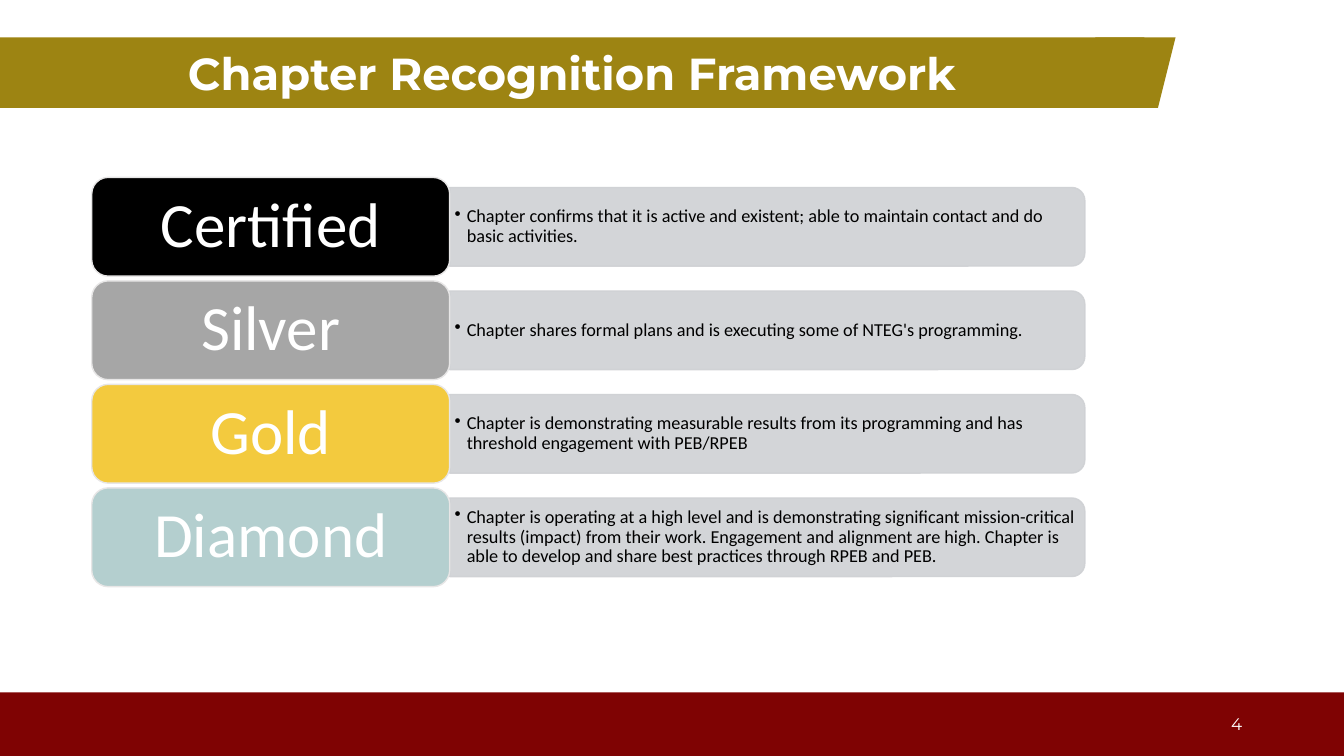
"""Build the Chapter Recognition Framework slide."""
from lxml.etree import SubElement
from pptx import Presentation
from pptx.dml.color import RGBColor
from pptx.enum.shapes import MSO_SHAPE
from pptx.enum.text import MSO_ANCHOR, PP_ALIGN
from pptx.oxml.ns import qn
from pptx.util import Inches, Pt

WHITE = RGBColor(0xFF, 0xFF, 0xFF)
BLACK = RGBColor(0x00, 0x00, 0x00)
MAROON = RGBColor(0x7F, 0x03, 0x03)
OLIVE = RGBColor(0x9D, 0x84, 0x12)
PANEL_GRAY = RGBColor(0xCF, 0xD1, 0xD4)
EDGE_GRAY = RGBColor(0xE7, 0xE6, 0xE6)
SILVER = RGBColor(0xA6, 0xA6, 0xA6)
GOLD = RGBColor(0xF3, 0xCA, 0x3E)
TEAL = RGBColor(0x6D, 0xA1, 0xA1)

TIERS = [
    ("Certified", BLACK, 100,
     "Chapter confirms that it is active and existent; able to maintain "
     "contact and do basic activities."),
    ("Silver", SILVER, 100,
     "Chapter shares formal plans and is executing some of NTEG's programming."),
    ("Gold", GOLD, 100,
     "Chapter is demonstrating measurable results from its programming and "
     "has threshold engagement with PEB/RPEB"),
    ("Diamond", TEAL, 51,
     "Chapter is operating at a high level and is demonstrating significant "
     "mission-critical results (impact) from their work. Engagement and "
     "alignment are high. Chapter is able to develop and share best practices "
     "through RPEB and PEB."),
]
FIRST_CENTER, LAST_CENTER = 2.25, 5.33
TIER_LEFT, TIER_WIDTH, TIER_HEIGHT = 0.91, 3.55, 0.98
PANEL_LEFT, PANEL_WIDTH, PANEL_HEIGHT = TIER_LEFT + TIER_WIDTH, 6.3, 0.78
DETAIL_WIDTH, DETAIL_HEIGHT = 6.26, 0.71


def set_opacity(color_format, percent):
    """Make a solid colour partly transparent."""
    color = color_format._xFill.find(qn("a:srgbClr"))
    SubElement(color, qn("a:alpha"), val=str(percent * 1000))


def add_block(slide, kind, left, top, width, height, color, edge=None, opacity=100):
    """Add a filled preset shape, outlined when an edge colour is given."""
    block = slide.shapes.add_shape(
        kind, Inches(left), Inches(top), Inches(width), Inches(height))
    block.shadow.inherit = False
    block.fill.solid()
    block.fill.fore_color.rgb = color
    if opacity < 100:
        set_opacity(block.fill.fore_color, opacity)
    if edge is None:
        block.line.fill.background()
    else:
        block.line.color.rgb = edge
        block.line.width = Pt(1)
    return block


def add_textbox(slide, left, top, width, height):
    """Add an empty text box."""
    return slide.shapes.add_textbox(
        Inches(left), Inches(top), Inches(width), Inches(height))


def write(holder, text, size, font, color, align, margins=(0.1, 0.05), bold=False):
    """Write one run, centred vertically, and return its paragraph."""
    frame = holder.text_frame
    frame.word_wrap = True
    frame.vertical_anchor = MSO_ANCHOR.MIDDLE
    frame.margin_left = frame.margin_right = Inches(margins[0])
    frame.margin_top = frame.margin_bottom = Inches(margins[1])
    paragraph = frame.paragraphs[0]
    paragraph.alignment = align
    run = paragraph.add_run()
    run.text = text
    run.font.size = Pt(size)
    run.font.name = font
    run.font.bold = bold
    run.font.color.rgb = color
    return paragraph


def add_bullet(paragraph, indent):
    """Give a paragraph a hanging bullet."""
    properties = paragraph._p.get_or_add_pPr()
    properties.set("marL", str(Inches(indent)))
    properties.set("indent", str(Inches(-indent)))
    SubElement(properties, qn("a:buChar"), char="•")


def add_header(slide, title):
    """Add the title band with its slanted end."""
    band = add_block(slide, MSO_SHAPE.RECTANGLE, 0, 0.37, 11.35, 0.7, OLIVE)
    write(band, title, 32, "Montserrat", WHITE, PP_ALIGN.CENTER, bold=True)
    add_block(slide, MSO_SHAPE.PARALLELOGRAM, 10.69, 0.37, 0.97, 0.7, OLIVE)


def add_footer(slide, number):
    """Add the footer band and the slide number."""
    add_block(slide, MSO_SHAPE.RECTANGLE, 0, 6.87, 13.33, 0.63, MAROON)
    page = add_textbox(slide, 9.42, 7.05, 3, 0.27)
    write(page, number, 12, "Montserrat", WHITE, PP_ALIGN.RIGHT)


def add_tier(slide, center, name, color, opacity, description):
    """Add one recognition level with its description panel."""
    panel = add_block(
        slide, MSO_SHAPE.ROUND_2_SAME_RECTANGLE,
        PANEL_LEFT + (PANEL_WIDTH - PANEL_HEIGHT) / 2, center - PANEL_WIDTH / 2,
        PANEL_HEIGHT, PANEL_WIDTH, PANEL_GRAY, PANEL_GRAY, 90)
    panel.rotation = 90
    set_opacity(panel.line.color, 90)

    detail = add_textbox(
        slide, PANEL_LEFT, center - DETAIL_HEIGHT / 2, DETAIL_WIDTH, DETAIL_HEIGHT)
    paragraph = write(
        detail, description, 13, "Calibri", BLACK, PP_ALIGN.LEFT, (0.05, 0.03))
    paragraph.line_spacing = 0.9
    add_bullet(paragraph, 0.12)

    level = add_block(
        slide, MSO_SHAPE.ROUNDED_RECTANGLE, TIER_LEFT, center - TIER_HEIGHT / 2,
        TIER_WIDTH, TIER_HEIGHT, color, EDGE_GRAY, opacity)
    label = write(
        level, name, 45, "Calibri", WHITE, PP_ALIGN.CENTER, (0.19, 0.09))
    label.line_spacing = 0.9


def main():
    """Assemble and save the slide."""
    deck = Presentation()
    deck.slide_width, deck.slide_height = Inches(13.33), Inches(7.5)
    slide = deck.slides.add_slide(deck.slide_layouts[6])
    add_footer(slide, "4")
    add_header(slide, "Chapter Recognition Framework")
    pitch = (LAST_CENTER - FIRST_CENTER) / (len(TIERS) - 1)
    for row, tier in enumerate(TIERS):
        add_tier(slide, FIRST_CENTER + row * pitch, *tier)
    deck.save("out.pptx")


if __name__ == "__main__":
    main()
